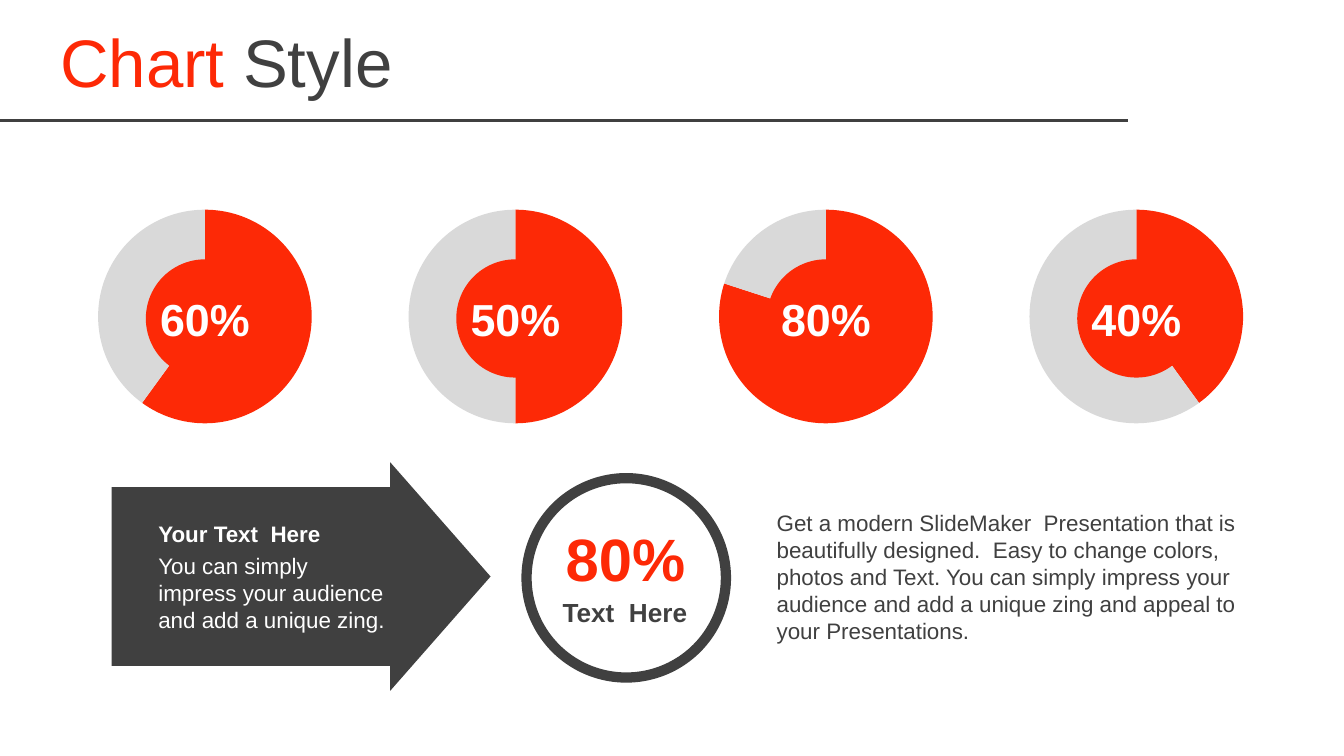
from lxml.etree import SubElement
from pptx import Presentation
from pptx.chart.data import CategoryChartData
from pptx.dml.color import RGBColor
from pptx.enum.chart import XL_CHART_TYPE as ChartType
from pptx.enum.shapes import MSO_CONNECTOR as Connector, MSO_SHAPE as Shape
from pptx.enum.text import MSO_ANCHOR as Anchor, PP_ALIGN as Align
from pptx.oxml import parse_xml
from pptx.oxml.ns import nsdecls, qn
from pptx.util import Inches, Pt

COLORS = {"accent": "FD2906", "dark": "404040", "rest": "D9D9D9", "white": "FFFFFF", "black": "000000"}
FONT = "Arial"
COLUMNS, ROWS = 100, 56.25
CELL = Inches(0.1)

PERCENTAGES = [60, 50, 80, 40]
CHART_LEFT, CHART_TOP, CHART_STEP = 7.3, 15.6, 23.1
CHART_WIDTH, CHART_HEIGHT, PLOT_SHARE = 15.9, 16.5, 0.965
DISC_SIZE, DISC_TOP = 8.8, 19.3
LABEL_WIDTH, LABEL_HEIGHT, LABEL_TOP = 9, 5, 21.2

TITLE = [("Chart ", "accent"), ("Style", "dark")]
TITLE_BOX = (3.5, 1.4, 80.3, 6.3)
RULE_END, RULE_ROW = 83.9, 8.95

PANELS = [
    (Shape.RIGHT_ARROW, (8.3, 34.4, 28.2, 17), (0.782, 0.439)),
    (Shape.DONUT, (38.8, 35.2, 15.6, 15.6), (0.049,)),
]

LEFT = {"alignment": Align.LEFT}
CENTER = {"alignment": Align.CENTER}
TEXTS = [
    ("Your Text  Here", "white", (10.8, 38.2, 19.4, 3), {"size": Pt(12), "bold": True}, LEFT, Anchor.TOP),
    ("You can simply impress your audience and add a unique zing.",
     "white", (10.8, 40.6, 19.4, 7.1), {"size": Pt(12)}, LEFT, Anchor.TOP),
    ("80%", "accent", (40.9, 38.3, 11.3, 6.4), {"size": Pt(32), "bold": True}, CENTER, Anchor.MIDDLE),
    ("Text  Here", "dark", (40.6, 43.9, 11.8, 3.4), {"size": Pt(14), "bold": True}, CENTER, Anchor.TOP),
    ("Get a modern SlideMaker  Presentation that is beautifully designed.  Easy to change colors, "
     "photos and Text. You can simply impress your audience and add a unique zing and appeal to "
     "your Presentations.", "dark", (56.8, 37.4, 37.1, 11.1), {"size": Pt(12)}, LEFT, Anchor.TOP),
]


def grid(*cells):
    return [round(cell * CELL) for cell in cells]


def color(name):
    return RGBColor.from_string(COLORS[name])


def set_all(target, values):
    for name, value in values.items():
        setattr(target, name, value)


def add_text(slide, runs, box, font_format, paragraph_format, anchor):
    frame = slide.shapes.add_textbox(*grid(*box)).text_frame
    set_all(frame, {"word_wrap": True, "vertical_anchor": anchor})
    paragraph = frame.paragraphs[0]
    set_all(paragraph, paragraph_format)
    for text, color_name in runs:
        run = paragraph.add_run()
        run.text = text
        set_all(run.font, {"name": FONT, **font_format})
        run.font.color.rgb = color(color_name)


def add_filled_shape(slide, kind, box, color_name, adjustments=()):
    shape = slide.shapes.add_shape(kind, *grid(*box))
    shape.shadow.inherit = False
    shape.fill.solid()
    shape.fill.fore_color.rgb = color(color_name)
    shape.line.fill.background()
    for index, value in enumerate(adjustments):
        shape.adjustments[index] = value


def set_plot_layout(chart):
    parts = {"layoutTarget": "inner", "xMode": "edge", "yMode": "edge",
             "x": 0, "y": 0, "w": 1, "h": PLOT_SHARE}
    items = "".join(f'<c:{name} val="{value}"/>' for name, value in parts.items())
    layout = parse_xml(f'<c:layout {nsdecls("c")}><c:manualLayout>{items}</c:manualLayout></c:layout>')
    plot_area = chart.element.find(".//" + qn("c:plotArea"))
    for old in plot_area.findall(qn("c:layout")):
        plot_area.remove(old)
    plot_area.insert(0, layout)


def add_doughnut(slide, percentage, left):
    data = CategoryChartData()
    data.categories = ["1", "2"]
    data.add_series("Series 1", (percentage, 100 - percentage))
    box = grid(left, CHART_TOP, CHART_WIDTH, CHART_HEIGHT)
    chart = slide.shapes.add_chart(ChartType.DOUGHNUT, *box, data).chart
    set_all(chart, {"has_legend": False, "has_title": False})
    set_all(chart.font, {"name": FONT, "size": Pt(18)})
    chart.font.color.rgb = color("black")
    plot = chart.plots[0]
    plot.vary_by_categories = True
    for index, color_name in enumerate(("accent", "rest")):
        point_format = plot.series[0].points[index].format
        point_format.fill.solid()
        point_format.fill.fore_color.rgb = color(color_name)
        point_format.line.fill.background()
    chart.element.find(".//" + qn("c:holeSize")).set("val", "75")
    set_plot_layout(chart)


def add_gauge(slide, percentage, left):
    center = left + CHART_WIDTH / 2
    add_doughnut(slide, percentage, left)
    add_filled_shape(slide, Shape.OVAL, (center - DISC_SIZE / 2, DISC_TOP, DISC_SIZE, DISC_SIZE), "accent")
    label_box = (center - LABEL_WIDTH / 2, LABEL_TOP, LABEL_WIDTH, LABEL_HEIGHT)
    add_text(slide, [(f"{percentage}%", "white")], label_box,
             {"size": Pt(24), "bold": True}, CENTER, Anchor.MIDDLE)


def add_rule(slide):
    rule = slide.shapes.add_connector(Connector.STRAIGHT, *grid(0, RULE_ROW, RULE_END, RULE_ROW))
    rule.line.width = Pt(1.5)
    rule.line.color.rgb = color("dark")
    SubElement(rule.element.spPr, qn("a:effectLst"))


def main():
    presentation = Presentation()
    presentation.slide_width, presentation.slide_height = grid(COLUMNS, ROWS)
    slide = presentation.slides.add_slide(presentation.slide_layouts[6])
    add_rule(slide)
    add_text(slide, TITLE, TITLE_BOX, {"size": Pt(36)}, {"space_before": Pt(5)}, Anchor.MIDDLE)
    for kind, box, adjustments in PANELS:
        add_filled_shape(slide, kind, box, "dark", adjustments)
    for text, color_name, box, font_format, paragraph_format, anchor in TEXTS:
        add_text(slide, [(text, color_name)], box, font_format, paragraph_format, anchor)
    for index, percentage in enumerate(PERCENTAGES):
        add_gauge(slide, percentage, CHART_LEFT + index * CHART_STEP)
    presentation.save("out.pptx")


if __name__ == "__main__":
    main()
